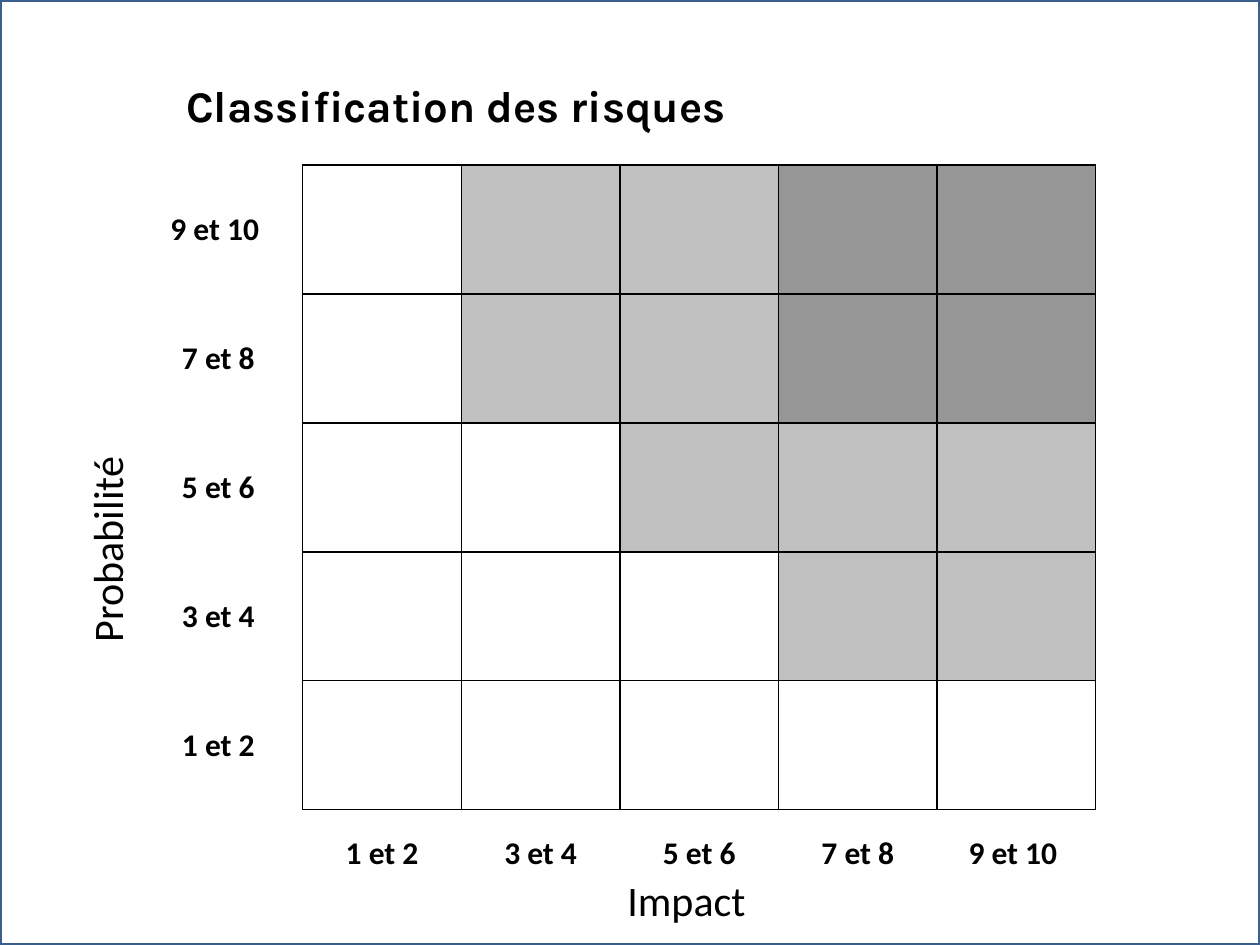
from dataclasses import dataclass

from lxml.etree import SubElement
from pptx import Presentation
from pptx.dml.color import RGBColor
from pptx.enum.shapes import MSO_SHAPE
from pptx.enum.text import MSO_ANCHOR, PP_ALIGN
from pptx.oxml.ns import qn
from pptx.util import Pt


@dataclass(frozen=True)
class Theme:
    ink: str = "000000"
    paper: str = "FFFFFF"
    frame: str = "3A5F8C"
    medium: str = "C0C0C0"
    high: str = "969696"
    heading_font: str = "Karla"
    body_font: str = "Calibri"
    heading_size: float = 25
    axis_size: float = 24
    label_size: float = 18


theme = Theme()


def format_text(text_frame, font_name, size, bold=False):
    for run in text_frame.paragraphs[0].runs:
        run.font.name = font_name
        run.font.size = Pt(size)
        run.font.bold = bold
        run.font.color.rgb = RGBColor.from_string(theme.ink)


def add_borders(cell, sides):
    properties = cell._tc.get_or_add_tcPr()
    for side in "LRTB":
        visible = side in sides
        border = SubElement(properties, qn(f"a:ln{side}"), w=str(Pt(1) if visible else 0))
        if visible:
            solid = SubElement(border, qn("a:solidFill"))
            SubElement(solid, qn("a:srgbClr"), val=theme.ink)
        else:
            SubElement(border, qn("a:noFill"))


prs = Presentation()
prs.slide_width, prs.slide_height = Pt(720), Pt(540)
slide = prs.slides.add_slide(prs.slide_layouts[6])

frame = slide.shapes.add_shape(MSO_SHAPE.RECTANGLE, 0, 0, Pt(720), Pt(540))
frame.shadow.inherit = False
frame.fill.solid()
frame.fill.fore_color.rgb = RGBColor.from_string(theme.paper)
frame.line.color.rgb = RGBColor.from_string(theme.frame)
frame.line.width = Pt(2)

captions = [
    ("Classification des risques", (99.4, 31.7, 607, 56.9), 0, theme.heading_font, theme.heading_size, True),
    ("Probabilité", (0, 294.5, 122.4, 36.7), 270, theme.body_font, theme.axis_size, False),
    ("Impact", (351.4, 496.1, 82.8, 36.7), 0, theme.body_font, theme.axis_size, False),
]
for wording, bounds, rotation, font_name, size, bold in captions:
    caption = slide.shapes.add_textbox(*map(Pt, bounds))
    caption.rotation = rotation
    caption.text_frame.word_wrap = rotation == 0
    caption.text_frame.vertical_anchor = MSO_ANCHOR.MIDDLE if bold else MSO_ANCHOR.TOP
    caption.text_frame.text = wording
    format_text(caption.text_frame, font_name, size, bold)

levels = ["1 et 2", "3 et 4", "5 et 6", "7 et 8", "9 et 10 "]
risk_rows = ["LMMHH", "LMMHH", "LLMMM", "LLLMM", "LLLLL"]
risk_fills = {"L": theme.paper, "M": theme.medium, "H": theme.high}
count = len(levels)
column_widths = [96.5] + [90.65] * count
row_heights = [73.7] * count + [39.6]

matrix = slide.shapes.add_table(
    count + 1, count + 1, Pt(76.5), Pt(94.3), Pt(sum(column_widths)), Pt(sum(row_heights))
).table
matrix.first_row = False
matrix.horz_banding = False
matrix._tbl.tblPr.find(qn("a:tableStyleId")).text = "{2D5ABB26-0587-4C30-8999-92F81FD0307C}"
for column, width in zip(matrix.columns, column_widths):
    column.width = Pt(width)
for row, height in zip(matrix.rows, row_heights):
    row.height = Pt(height)

for row in range(count + 1):
    for column in range(count + 1):
        cell = matrix.cell(row, column)
        if row < count and column > 0:
            add_borders(cell, "LRTB")
            cell.fill.solid()
            cell.fill.fore_color.rgb = RGBColor.from_string(risk_fills[risk_rows[row][column - 1]])
            continue
        is_probability = row < count
        is_impact = column > 0
        add_borders(cell, "R" if is_probability else "T" if is_impact else "")
        cell.fill.background()
        if is_probability or is_impact:
            cell.text_frame.text = levels[count - 1 - row] if is_probability else levels[column - 1]
            cell.vertical_anchor = MSO_ANCHOR.MIDDLE if is_probability else MSO_ANCHOR.BOTTOM
            cell.text_frame.paragraphs[0].alignment = PP_ALIGN.CENTER
            format_text(cell.text_frame, theme.body_font, theme.label_size, True)

prs.save("out.pptx")
